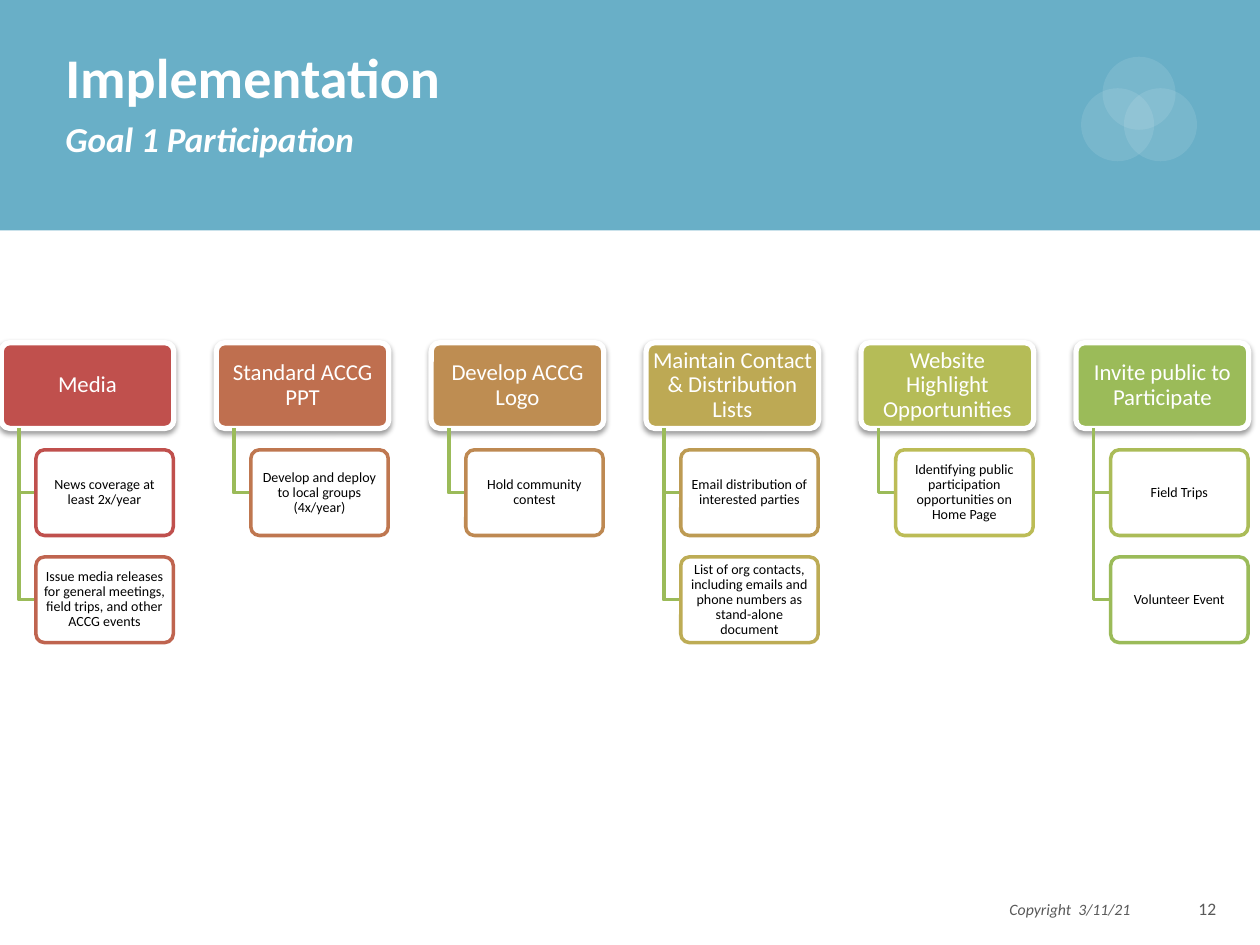
import pptx
import pptx.util
import pptx.dml.color
import pptx.enum.shapes
import pptx.enum.text
import pptx.oxml
import pptx.oxml.ns

Inches, Pt = pptx.util.Inches, pptx.util.Pt
SHAPE = pptx.enum.shapes.MSO_SHAPE
ALIGN = pptx.enum.text.PP_ALIGN
ANCHOR = pptx.enum.text.MSO_ANCHOR

COLORS = {"band": "69AFC7", "white": "FFFFFF", "black": "000000",
          "gray": "595959", "link": "9BBB59"}

# Heading, its fill, then (task, outline) pairs
GROUPS = [
    ("Media", "C0504D", [
        ("News coverage at least 2x/year", "C0504D"),
        ("Issue media releases for general meetings, field trips, "
         "and other ACCG events", "BF644F")]),
    ("Standard ACCG PPT", "BF6F4F", [
        ("Develop and deploy to local groups (4x/year)", "BF7750")]),
    ("Develop ACCG Logo", "BE8D52", [
        ("Hold community contest", "BE8952")]),
    ("Maintain Contact & Distribution Lists", "BDA954", [
        ("Email distribution of interested parties", "BD9B53"),
        ("List of org contacts, including emails and phone numbers "
         "as stand-alone document", "BDAC55")]),
    ("Website Highlight Opportunities", "B5BC57", [
        ("Identifying public participation opportunities on Home Page",
         "BCBC56")]),
    ("Invite public to Participate", "9BBB59", [
        ("Field Trips", "ABBC58"),
        ("Volunteer Event", "9BBB59")]),
]
RINGS = [(8.58, 0.7), (8.92, 0.7), (8.75, 0.45)]

LEFT, LAST, TOP = 0.01, 8.54, 2.72
STEP = (LAST - LEFT) / (len(GROUPS) - 1)
HEAD_W, TASK_W, BOX_H = 1.37, 1.09, 0.68
TASK_X, TASK_Y, TASK_STEP = 0.275, 3.57, 0.85
STEM_X = 0.14

prs = pptx.Presentation()
prs.slide_width, prs.slide_height = Inches(10), Inches(7.5)
slide = prs.slides.add_slide(prs.slide_layouts[6])
shapes = slide.shapes


def rgb(color):
    return pptx.dml.color.RGBColor.from_string(color)


def write(frame, text, size=12, color=COLORS["white"], bold=False,
          italic=False, align=ALIGN.LEFT, anchor=ANCHOR.MIDDLE,
          inset=(0.1, 0.05), space=1.0):
    """Add text as a run; a later call extends the same paragraph."""
    frame.word_wrap = True
    frame.vertical_anchor = anchor
    frame.margin_left = frame.margin_right = Inches(inset[0])
    frame.margin_top = frame.margin_bottom = Inches(inset[1])
    para = frame.paragraphs[0]
    para.alignment, para.line_spacing = align, space
    run = para.add_run()
    run.text = text
    font = run.font
    font.name, font.size = "Calibri", Pt(size)
    font.bold, font.italic = bold, italic
    font.color.rgb = rgb(color)


def text_box(x, y, w, h):
    return shapes.add_textbox(Inches(x), Inches(y), Inches(w), Inches(h)).text_frame


def draw(kind, x, y, w, h, fill, alpha=100, line=None, width=2):
    shape = shapes.add_shape(kind, Inches(x), Inches(y), Inches(w), Inches(h))
    shape.shadow.inherit = False
    shape.fill.solid()
    shape.fill.fore_color.rgb = rgb(fill)
    if alpha < 100:
        tint = shape.element.spPr.find(".//" + pptx.oxml.ns.qn("a:srgbClr"))
        tint.append(pptx.oxml.parse_xml(
            f'<a:alpha {pptx.oxml.ns.nsdecls("a")} val="{alpha * 1000}"/>'))
    if line:
        shape.line.color.rgb = rgb(line)
        shape.line.width = Pt(width)
    else:
        shape.line.fill.background()
    return shape


def box(text, x, y, w, size, color, inset, **look):
    shape = draw(SHAPE.ROUNDED_RECTANGLE, x, y, w, BOX_H, **look)
    shape.adjustments[0] = 0.1
    write(shape.text_frame, text, size=size, color=color, inset=inset,
          align=ALIGN.CENTER, space=0.9)
    return shape


def cast(shape):
    """Give the shape a soft shadow below it."""
    effects = shape.element.spPr.find(pptx.oxml.ns.qn("a:effectLst"))
    effects.append(pptx.oxml.parse_xml(
        f'<a:outerShdw {pptx.oxml.ns.nsdecls("a")} blurRad="{Pt(3.1)}" '
        f'dist="{Pt(1.6)}" dir="5400000" rotWithShape="0">'
        f'<a:srgbClr val="{COLORS["black"]}"><a:alpha val="38000"/></a:srgbClr>'
        '</a:outerShdw>'))


def elbow(x, top, end, y):
    pen = shapes.build_freeform(Inches(x), Inches(top))
    pen.add_line_segments([(Inches(x), Inches(y)), (Inches(end), Inches(y))],
                          close=False)
    shape = pen.convert_to_shape()
    shape.shadow.inherit = False
    shape.fill.background()
    shape.line.color.rgb = rgb(COLORS["link"])
    shape.line.width = Pt(2)


draw(SHAPE.RECTANGLE, 0, 0, 10, 1.83, COLORS["band"])
for x, y in RINGS:
    draw(SHAPE.OVAL, x, y, 0.58, 0.58, COLORS["white"], alpha=10)

write(text_box(0.42, 0.34, 7.67, 0.53), "Implementation", size=32, bold=True)
write(text_box(0.42, 0.88, 7.17, 0.58), "Goal 1 Participation", size=20,
      bold=True, italic=True, anchor=ANCHOR.TOP)

footer = text_box(5.67, 7.08, 4.08, 0.4)
props = footer.paragraphs[0]._p.get_or_add_pPr()
props.append(pptx.oxml.parse_xml(
    f'<a:tabLst {pptx.oxml.ns.nsdecls("a")}>'
    f'<a:tab pos="{Inches(1.5)}" algn="l"/></a:tabLst>'))
note = dict(color=COLORS["gray"], align=ALIGN.RIGHT, anchor=ANCHOR.TOP)
write(footer, "Copyright  3/11/21", size=9, italic=True, **note)
write(footer, "\t12", size=10, **note)

for col, (head, fill, tasks) in enumerate(GROUPS):
    x = LEFT + col * STEP
    cast(box(head, x, TOP, HEAD_W, 13, COLORS["white"], (0.03, 0.02),
             fill=fill, line=COLORS["white"], width=3))
    for row, (task, edge) in enumerate(tasks):
        y = TASK_Y + row * TASK_STEP
        elbow(x + STEM_X, TOP + BOX_H, x + TASK_X, y + BOX_H / 2)
        box(task, x + TASK_X, y, TASK_W, 8, COLORS["black"], (0.02, 0.01),
            fill=COLORS["white"], alpha=90, line=edge)

prs.save("out.pptx")
